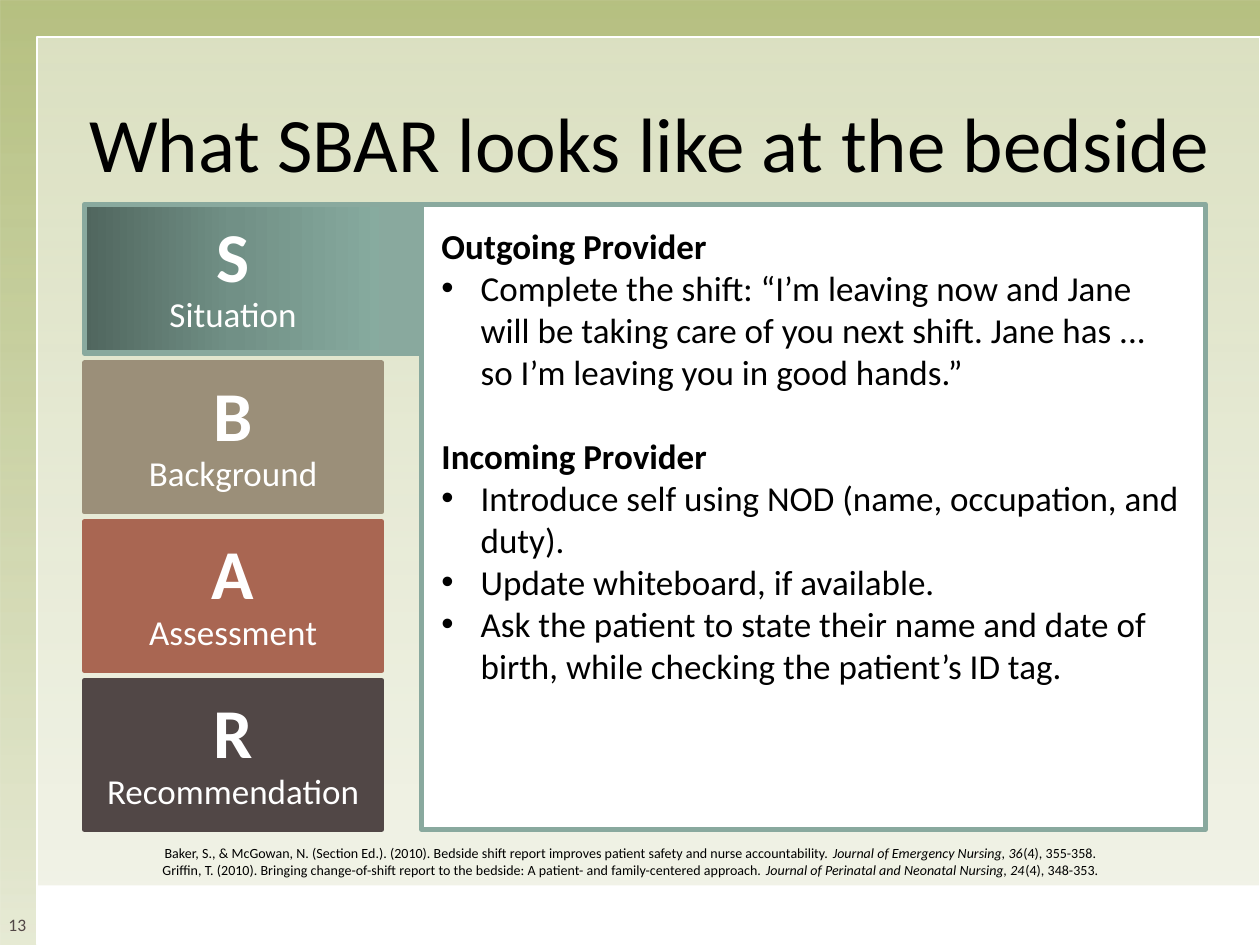
from dataclasses import dataclass

from lxml.etree import SubElement as Sub
from pptx import Presentation as Deck
from pptx.dml.color import RGBColor as Rgb
from pptx.enum.shapes import MSO_SHAPE as Kind
from pptx.enum.text import MSO_ANCHOR as Anchor, PP_ALIGN as Align
from pptx.oxml.ns import qn
from pptx.util import Cm, Pt


@dataclass(frozen=True)
class Theme:
    font: str = "Calibri"
    white: str = "FFFFFF"
    black: str = "000000"
    moss: str = "9EAC58"
    teal: str = "89A99E"
    sand: str = "9B8F79"
    rust: str = "A96652"
    dark: str = "514746"
    fade: tuple = ("50665E", "719086", "87AB9F")
    title: int = 44
    mark: int = 40
    body: int = 20
    page: int = 10
    note: int = 8


class Pen:
    """Draws styled elements on the current slide."""

    def __init__(self, theme, slide):
        self.theme = theme
        self.slide = slide

    def rect(self, box, fill, line=None, width=3, alpha=None):
        shape = self.slide.shapes.add_shape(Kind.RECTANGLE, *map(Cm, box))
        shape.shadow.inherit = False
        shape.fill.solid()
        shape.fill.fore_color.rgb = Rgb.from_string(fill)
        if alpha:
            tint = shape._element.spPr.find(".//" + qn("a:srgbClr"))
            Sub(tint, qn("a:alpha"), val=str(alpha * 1000))
        if line:
            shape.line.color.rgb = Rgb.from_string(line)
            shape.line.width = Pt(width)
        else:
            shape.line.fill.background()
        return shape

    def blend(self, shape, stops, angle):
        shape.fill.gradient()
        shape.fill.gradient_angle = angle
        row = shape._element.spPr.find(".//" + qn("a:gsLst"))
        for old in list(row):
            row.remove(old)
        for i, (hue, alpha) in enumerate(stops):
            stop = Sub(row, qn("a:gs"), pos=str(i * 50000))
            tint = Sub(stop, qn("a:srgbClr"), val=hue)
            if alpha < 100:
                Sub(tint, qn("a:alpha"), val=str(alpha * 1000))

    def frame(self, shape, anchor, pads=(0.25, 0.13, 0.25, 0.13), wrap=True):
        frame = shape.text_frame
        frame.word_wrap = wrap
        frame.vertical_anchor = anchor
        (frame.margin_left, frame.margin_top,
         frame.margin_right, frame.margin_bottom) = map(Cm, pads)
        return frame

    def label(self, box, anchor, **style):
        shape = self.slide.shapes.add_textbox(*map(Cm, box))
        return self.frame(shape, anchor, **style)

    def para(self, frame, text, size, hue, bold=False, align=Align.CENTER,
             bullet=False, gap=0, lead=None):
        first = frame.paragraphs[0]
        para = frame.add_paragraph() if first.runs else first
        for i, part in enumerate(text.split("|")):
            run = para.add_run()
            run.text = part
            if i % 2:
                run.font.italic = True
        para.alignment = align
        if gap:
            para.space_before = Pt(gap)
        if lead:
            para.line_spacing = lead
        if bullet:
            props = para._p.get_or_add_pPr()
            props.set("marL", str(Cm(0.79)))
            props.set("indent", str(-Cm(0.79)))
            Sub(props, qn("a:buFont"), typeface="Arial")
            Sub(props, qn("a:buChar"), char="•")
        para.font.name = self.theme.font
        para.font.size = Pt(size)
        para.font.bold = bold
        para.font.color.rgb = Rgb.from_string(hue)

    def card(self, box, hue, mark, word):
        shape = self.rect(box, hue, hue)
        frame = self.frame(shape, Anchor.MIDDLE)
        white = self.theme.white
        self.para(frame, mark, self.theme.mark, white, bold=True, lead=0.9)
        self.para(frame, word, self.theme.body, white, lead=0.9)
        return shape


PARTS = [
    ("Outgoing Provider", [
        "Complete the shift: “I’m leaving now and Jane will be taking care of "
        "you next shift. Jane has ... so I’m leaving you in good hands.”"]),
    ("Incoming Provider", [
        "Introduce self using NOD (name, occupation, and duty).",
        "Update whiteboard, if available.",
        "Ask the patient to state their name and date of birth, while checking "
        "the patient’s ID tag."]),
]
NOTES = [
    "Baker, S., & McGowan, N. (Section Ed.). (2010). Bedside shift report "
    "improves patient safety and nurse accountability. "
    "|Journal of Emergency Nursing, 36|(4), 355-358.",
    "Griffin, T. (2010). Bringing change-of-shift report to the bedside: "
    "A patient- and family-centered approach. "
    "|Journal of Perinatal and Neonatal Nursing, 24|(4), 348-353.",
]


def main():
    theme = Theme()
    deck = Deck()
    deck.slide_width, deck.slide_height = Cm(25.4), Cm(19.05)
    pen = Pen(theme, deck.slides.add_slide(deck.slide_layouts[6]))

    back = pen.rect((0, 0, 25.4, 19.05), theme.moss)
    pen.blend(back, [(theme.moss, a) for a in (75, 50, 25)], 270)
    pen.rect((0.74, 0.74, 24.66, 18.3), theme.white, theme.white, 1, 50)
    pen.rect((0.74, 17.85, 24.66, 1.2), theme.white)
    page = pen.label((0, 17.85, 0.7, 1.2), Anchor.BOTTOM, pads=(0, 0.1, 0, 0.2))
    pen.para(page, "13", theme.page, theme.dark)

    title = pen.label((1.48, 1.27, 23.24, 3.18), Anchor.MIDDLE)
    pen.para(title, "What SBAR looks like at the bedside", theme.title, theme.black)

    left, top, wide, high, step = 1.7, 4.12, 6, 3, 3.2
    pen.rect((left + wide, top, 1, high), theme.teal, theme.teal)
    words = ["Situation", "Background", "Assessment", "Recommendation"]
    hues = [theme.teal, theme.sand, theme.rust, theme.dark]
    cards = [pen.card((left, top + i * step, wide, high), hue, word[0], word)
             for i, (word, hue) in enumerate(zip(words, hues))]
    pen.blend(cards[0], [(hue, 100) for hue in theme.fade], 0)

    panel = pen.rect((8.5, top, 15.8, 3 * step + high), theme.white, theme.teal)
    body = pen.frame(panel, Anchor.TOP, (0.4,) * 4)
    for i, (head, items) in enumerate(PARTS):
        pen.para(body, head, theme.body, theme.black, True, Align.LEFT, gap=24 * i)
        for item in items:
            pen.para(body, item, theme.body, theme.black, align=Align.LEFT, bullet=True)

    notes = pen.label((2.92, 16.89, 19.58, 0.94), Anchor.TOP, wrap=False)
    for note in NOTES:
        pen.para(notes, note, theme.note, theme.black)

    deck.save("out.pptx")


if __name__ == "__main__":
    main()
